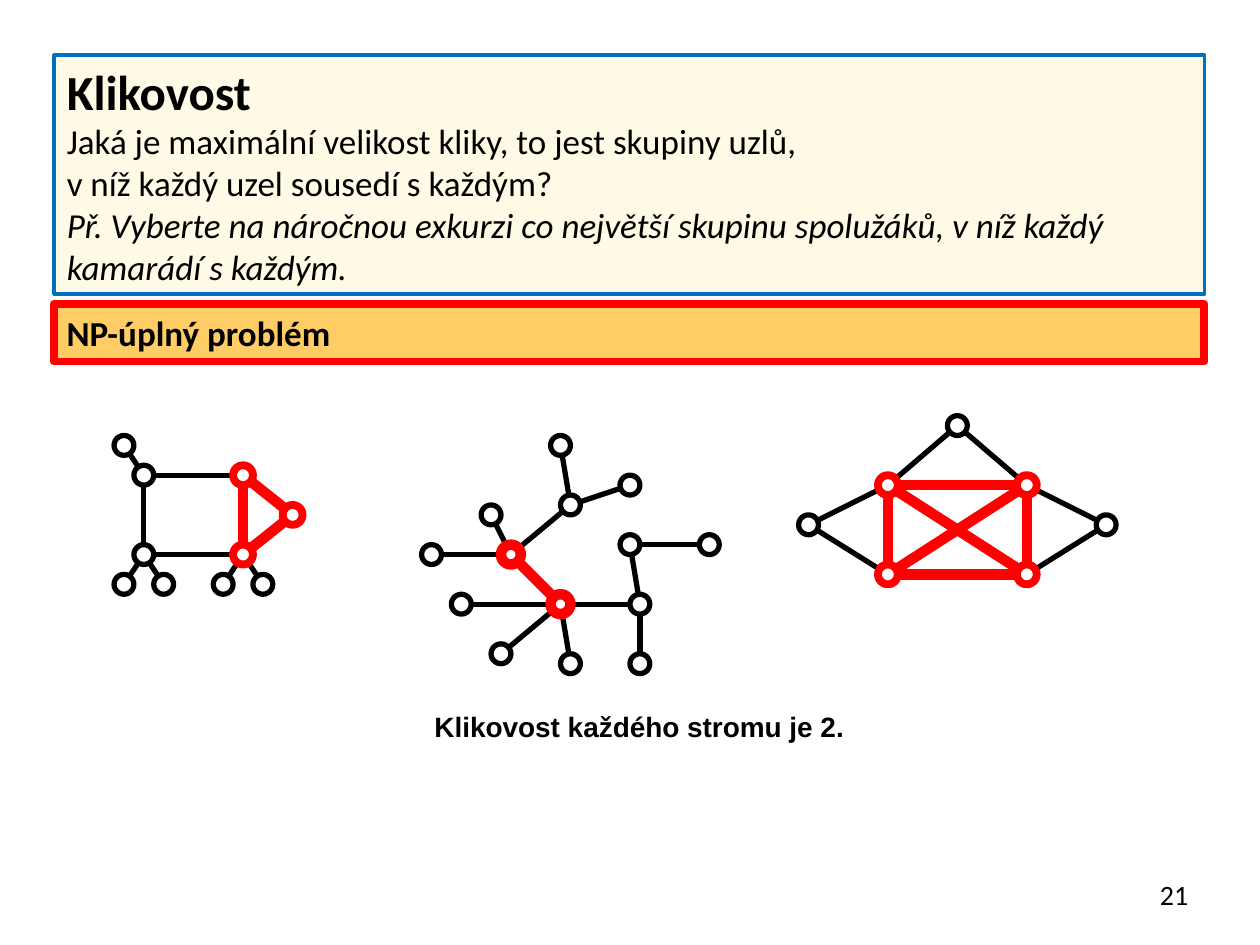
from lxml import etree
from pptx import Presentation, util as u
from pptx.dml.color import RGBColor
from pptx.enum import shapes, text
from pptx.oxml.ns import qn

BLACK = RGBColor(0x00, 0x00, 0x00)
WHITE = RGBColor(0xFF, 0xFF, 0xFF)
RED = RGBColor(0xFF, 0x00, 0x00)
BLUE = RGBColor(0x00, 0x70, 0xC0)
CREAM = RGBColor(0xFF, 0xFA, 0xE5)
ORANGE = RGBColor(0xFF, 0xCC, 0x66)

# Nodes are (column, row) on a 2 mm grid; edges are pairs of node names.
STEP, LEFT, TOP = u.Mm(2), u.Mm(1), u.Mm(-0.2)
GRAPHS = [
    {"nodes": {"a": (12, 45), "b": (14, 48), "c": (24, 48), "d": (29, 52), "e": (24, 56),
               "f": (14, 56), "g": (12, 59), "h": (16, 59), "i": (22, 59), "j": (26, 59)},
     "edges": "ab bc cd de ce ef bf fg fh ei ej", "clique": "cde", "ring": 4.5},
    {"nodes": {"a": (96, 43), "b": (89, 49), "c": (103, 49), "d": (103, 58),
               "e": (89, 58), "f": (81, 53), "g": (111, 53)},
     "edges": "ab ac bf ef cg dg bc cd de be bd ce", "clique": "bcde", "ring": 4.5},
    {"nodes": {"a": (56, 45), "b": (57, 51), "c": (63, 49), "d": (49, 52), "e": (51, 56),
               "f": (43, 56), "g": (46, 61), "h": (56, 61), "i": (50, 66), "j": (57, 67),
               "k": (64, 61), "l": (63, 55), "m": (64, 67), "n": (71, 55)},
     "edges": "ab bc be de ef gh hi hj hk kl km ln eh", "clique": "eh", "ring": 6},
]


def style_line(shape, color, width):
    shape.line.color.rgb = color
    shape.line.width = u.Pt(width)


def write(shape, lines, align=text.PP_ALIGN.LEFT, anchor=text.MSO_ANCHOR.MIDDLE):
    """Fill a shape with paragraphs given as (wording, font values)."""
    frame = shape.text_frame
    frame.auto_size = text.MSO_AUTO_SIZE.NONE
    frame.word_wrap = True
    frame.vertical_anchor = anchor
    frame.text = "\n".join(wording for wording, _ in lines)
    for paragraph, (_, values) in zip(frame.paragraphs, lines):
        paragraph.alignment = align
        paragraph.font.color.rgb = BLACK
        for name, value in ({"name": "Calibri", "size": u.Pt(20)} | values).items():
            setattr(paragraph.font, name, value)


presentation = Presentation()
presentation.slide_width, presentation.slide_height = u.Inches(10), u.Inches(7.5)
slide = presentation.slides.add_slide(presentation.slide_layouts[5])

# Definition and complexity boxes share one left edge and width.
box_left, box_width = u.Inches(0.43), u.Inches(9.13)
definition = slide.shapes.title
definition.left, definition.top = box_left, u.Inches(0.44)
definition.width, definition.height = box_width, u.Inches(1.89)
complexity = slide.shapes.add_shape(
    shapes.MSO_SHAPE.RECTANGLE, box_left, u.Inches(2.41), box_width, u.Inches(0.46))
complexity.shadow.inherit = False
for box, fill, color, width in [(definition, CREAM, BLUE, 2.25), (complexity, ORANGE, RED, 4.5)]:
    box.fill.solid()
    box.fill.fore_color.rgb = fill
    style_line(box, color, width)
write(definition, [
    ("Klikovost", {"size": u.Pt(28), "bold": True}),
    ("Jaká je maximální velikost kliky, to jest skupiny uzlů,", {}),
    ("v níž každý uzel sousedí s každým?", {}),
    ("Př. Vyberte na náročnou exkurzi co největší skupinu spolužáků, v níž každý",
     {"italic": True}),
    ("kamarádí s každým.", {"italic": True}),
])
write(complexity, [("NP-úplný problém", {"bold": True})])

slide_number = slide.shapes.add_textbox(
    u.Inches(7.2), u.Inches(6.9), u.Inches(2.33), u.Inches(0.4))
write(slide_number, [("21", {"size": u.Pt(16)})], align=text.PP_ALIGN.RIGHT)

# Edges inside the clique are red and thick.
for graph in GRAPHS:
    clique = set(graph["clique"])
    centers = {name: (LEFT // 2 * 1 + STEP * column + LEFT - LEFT // 2, TOP + STEP * row)
               for name, (column, row) in graph["nodes"].items()}
    for start, end in graph["edges"].split():
        edge = slide.shapes.add_connector(
            shapes.MSO_CONNECTOR.STRAIGHT, *centers[start], *centers[end])
        etree.SubElement(edge.line._get_or_add_ln().getparent(), qn("a:effectLst"))
        style_line(edge, *((RED, 6) if {start, end} <= clique else (BLACK, 3)))
    for name, (x, y) in centers.items():
        node = slide.shapes.add_shape(
            shapes.MSO_SHAPE.OVAL, x - STEP, y - STEP, 2 * STEP, 2 * STEP)
        node.shadow.inherit = False
        node.fill.solid()
        node.fill.fore_color.rgb = WHITE
        style_line(node, *((RED, graph["ring"]) if name in clique else (BLACK, 3)))

caption = slide.shapes.add_textbox(
    u.Inches(3.35), u.Inches(5.58), u.Inches(3.46), u.Inches(0.37))
write(caption, [("Klikovost každého stromu je 2.",
                 {"name": "Arial", "size": u.Pt(16), "bold": True})],
      anchor=text.MSO_ANCHOR.TOP)

presentation.save("out.pptx")
